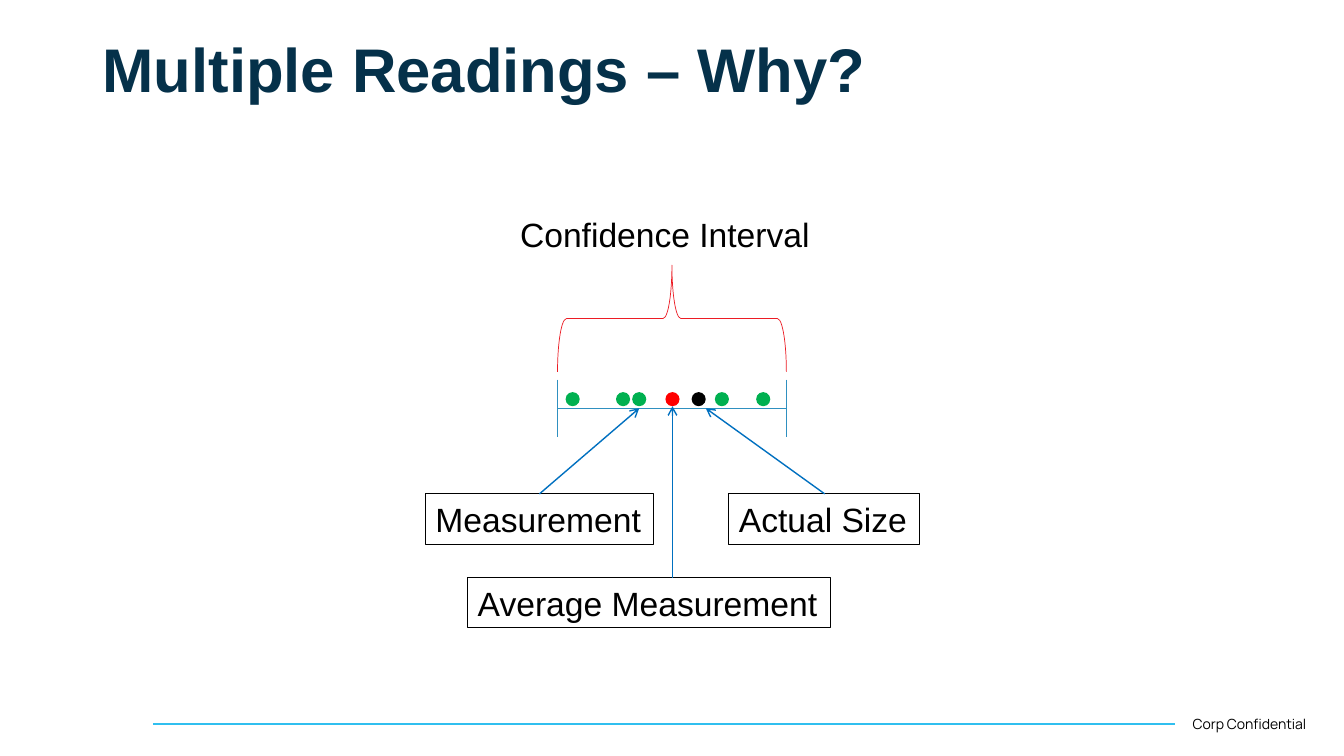
from pptx import Presentation
from pptx.dml.color import RGBColor
from pptx.enum.shapes import MSO_CONNECTOR as Conn, MSO_SHAPE as Geo
from pptx.enum.text import MSO_ANCHOR as Anchor, MSO_AUTO_SIZE as Fit
from pptx.oxml.ns import qn
from pptx.util import Inches, Pt
from lxml import etree


class Theme:
    navy, black, cyan = "05314A", "000000", "30BFEF"
    scale, arrow, brace = "2F90C0", "0070C0", "EC1C24"
    red, green = "FF0000", "00B050"
    font, small = "Arial", "Manrope"
    head, body, note = 44, 24, 10


# Content: text, box (left, top, width, height)
TITLE = "Multiple Readings – Why?", (0.92, 0.28, 11.5, 0.88)
FOOTER = "Corp Confidential", (11.73, 7.05, 1.48, 0.27)
RANGE = "Confidence Interval", (5.06, 2.07, 3.11, 0.5)

# Label, box, arrow start and arrow tip
LABELS = [
    ("Measurement", (4.22, 4.9, 2.26, 0.5), (5.35, 4.9), (6.34, 4.05)),
    ("Actual Size", (7.23, 4.9, 1.89, 0.5), (8.18, 4.9), (7, 4.05)),
    ("Average Measurement", (4.64, 5.73, 3.6, 0.5), (6.67, 5.73), (6.67, 4.03)),
]

# Left edges of the dots by colour
DOTS = {
    Theme.green: [5.61, 6.11, 6.27, 7.09, 7.5],
    Theme.red: [6.6],
    Theme.black: [6.86],
}
DOT_TOP, DOT = 3.89, 0.14

# Measuring scale and brace
LOW, HIGH, AXIS, TICK = 5.53, 7.8, 4.05, 0.57
BRACE_TOP, BRACE_H = 2.63, 1.06

prs = Presentation()
prs.slide_width, prs.slide_height = Inches(13.33), Inches(7.5)
slide = prs.slides.add_slide(prs.slide_layouts[6])
shapes = slide.shapes


def rgb(code):
    return RGBColor.from_string(code)


def add_line(start, end, color, width=1, arrow=False):
    line = shapes.add_connector(Conn.STRAIGHT, *map(Inches, start + end))
    line.line.color.rgb = rgb(color)
    line.line.width = Pt(width)
    props = line._element.spPr
    if arrow:
        etree.SubElement(props.find(qn("a:ln")), qn("a:tailEnd"), type="arrow")
    etree.SubElement(props, qn("a:effectLst"))


def add_shape(kind, box, fill=None, line=None, width=0.75):
    shape = shapes.add_shape(kind, *map(Inches, box))
    shape.shadow.inherit = False
    if fill:
        shape.fill.solid()
        shape.fill.fore_color.rgb = rgb(fill)
    else:
        shape.fill.background()
    if line:
        shape.line.color.rgb = rgb(line)
        shape.line.width = Pt(width)
    else:
        shape.line.fill.background()
    return shape


def add_text(text, box, size=Theme.body, name=Theme.font, color=Theme.black,
             bold=False, wrap=False, fit=Fit.SHAPE_TO_FIT_TEXT, edge=None):
    label = shapes.add_textbox(*map(Inches, box))
    if edge:
        label.line.color.rgb = rgb(edge)
        label.line.width = Pt(0.75)
    frame = label.text_frame
    frame.word_wrap, frame.auto_size = wrap, fit
    para = frame.paragraphs[0]
    para.text = text
    font = para.font
    font.size, font.name, font.bold = Pt(size), name, bold
    font.color.rgb = rgb(color)
    return frame


# Footer and title
add_line((1.52, 7.18), (11.65, 7.18), Theme.cyan, 1.5)
add_text(*FOOTER, size=Theme.note, name=Theme.small, wrap=True)
head = add_text(*TITLE, size=Theme.head, color=Theme.navy, bold=True,
                wrap=True, fit=Fit.NONE)
head.vertical_anchor = Anchor.MIDDLE
head.paragraphs[0].line_spacing = 0.9

# Scale with end ticks
for x in (LOW, HIGH):
    add_line((x, AXIS - TICK / 2), (x, AXIS + TICK / 2), Theme.scale)
add_line((LOW, AXIS), (HIGH, AXIS), Theme.scale)

# Readings
for color, lefts in DOTS.items():
    for left in lefts:
        add_shape(Geo.OVAL, (left, DOT_TOP, DOT, DOT), fill=color)

# Confidence interval: the brace is turned about its centre
span = HIGH - LOW
mid_x, mid_y = (LOW + HIGH) / 2, BRACE_TOP + BRACE_H / 2
brace = add_shape(Geo.RIGHT_BRACE,
                  (mid_x - BRACE_H / 2, mid_y - span / 2, BRACE_H, span),
                  line=Theme.brace, width=0.5)
brace.rotation = 270
add_text(*RANGE)

# Labels with arrows
for text, box, start, tip in LABELS:
    add_text(text, box, edge=Theme.black)
    add_line(start, tip, Theme.arrow, arrow=True)

prs.save("out.pptx")
